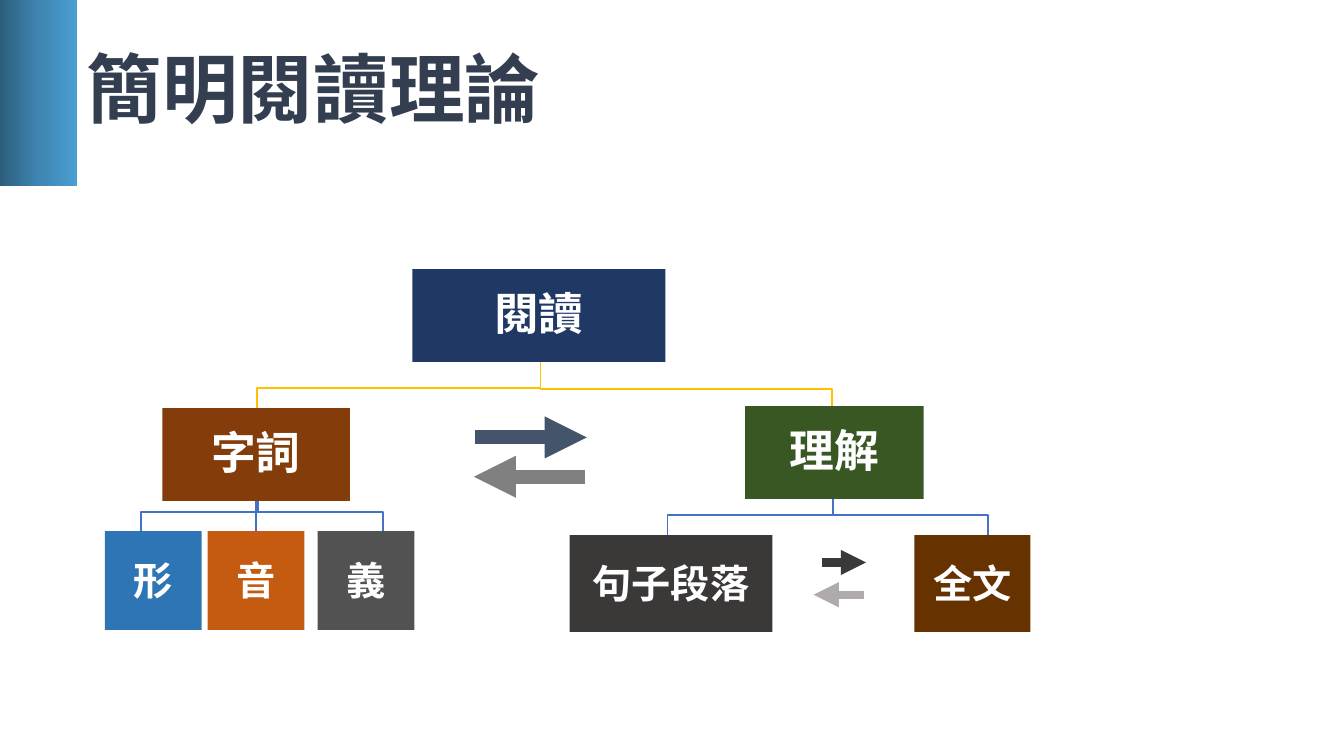
"""Build a slide with a tree diagram of a concise theory of reading."""
from copy import deepcopy

from lxml import etree
from pptx import Presentation
from pptx.dml.color import RGBColor
from pptx.enum.shapes import MSO_CONNECTOR, MSO_SHAPE
from pptx.enum.text import MSO_ANCHOR, MSO_AUTO_SIZE, PP_ALIGN
from pptx.oxml.ns import qn
from pptx.util import Inches, Pt

RECTANGLE = MSO_SHAPE.RECTANGLE
STRAIGHT = MSO_CONNECTOR.STRAIGHT
MIDDLE = MSO_ANCHOR.MIDDLE
NO_FIT = MSO_AUTO_SIZE.NONE
LEFT, CENTER = PP_ALIGN.LEFT, PP_ALIGN.CENTER
FONT = "Noto Sans CJK SC"
BOTTOM_SITE, TOP_SITE = 2, 0


def color(value):
    return RGBColor.from_string(value)


def write(shape, text, size, ink="FFFFFF", align=CENTER, spacing=0.9, inset=0.02):
    frame = shape.text_frame
    frame.word_wrap = True
    frame.auto_size = NO_FIT
    frame.vertical_anchor = MIDDLE
    frame.margin_left = frame.margin_right = Inches(inset)
    frame.margin_top = frame.margin_bottom = Inches(0.02)
    para = frame.paragraphs[0]
    para.alignment = align
    para.line_spacing = spacing
    span = para.add_run()
    span.text = text
    span.font.size = Pt(size)
    span.font.bold = True
    span.font.color.rgb = color(ink)
    span.font.name = FONT
    etree.SubElement(span.font._element, qn("a:ea"), typeface=FONT)


deck = Presentation()
deck.slide_width = Inches(13.33)
deck.slide_height = Inches(7.5)
page = deck.slides.add_slide(deck.slide_layouts[5])
shapes = page.shapes

title = shapes.title
title.left, title.top = Inches(0.76), Inches(0)
title.width, title.height = Inches(11.5), Inches(1.85)
write(title, "簡明閱讀理論", 54, ink="333F50", align=LEFT, inset=0.1)

stripe = shapes.add_shape(RECTANGLE, 0, 0, Inches(0.76), Inches(1.85))
stripe.shadow.inherit = False
stripe.line.fill.background()
stripe.fill.gradient()
stripe.fill.gradient_angle = 0
stop_list = stripe._element.spPr.find(qn("a:gradFill")).find(qn("a:gsLst"))
stop_list.insert(1, deepcopy(stop_list[0]))
stripe_stops = [(0, "2C5E7C"), (0.5, "3F85B1"), (1, "4A9ED2")]
for stop, (position, shade) in zip(stripe.fill.gradient_stops, stripe_stops):
    stop.position = position
    stop.color.rgb = color(shade)

# trunk x, top, bend, branch x, bottom, colour
branches = [
    (8.26, 4.93, 5.11, 9.8, 5.32, "4472C4"),
    (8.26, 4.93, 5.11, 6.62, 5.32, "4472C4"),
    (5.36, 3.59, 3.86, 8.25, 4.06, "FFC000"),
    (2.56, 4.95, 5.08, 3.8, 5.29, "4472C4"),
    (2.56, 4.95, 5.08, 1.4, 5.29, "4472C4"),
    (5.36, 3.59, 3.85, 2.55, 4.06, "FFC000"),
]
for trunk, top, bend, end, bottom, shade in branches:
    outline = shapes.build_freeform(Inches(trunk), Inches(top))
    corners = [(trunk, bend), (end, bend), (end, bottom)]
    outline.add_line_segments([(Inches(x), Inches(y)) for x, y in corners], close=False)
    branch = outline.convert_to_shape()
    branch.shadow.inherit = False
    branch.fill.background()
    branch.line.color.rgb = color(shade)
    branch.line.width = Pt(1)

boxes = {}
nodes = [
    ("閱讀", 4.09, 2.67, 2.51, 0.92, "203864", 32, 0.9),
    ("字詞", 1.61, 4.05, 1.86, 0.92, "843C0B", 32, 0.9),
    ("形", 1.04, 5.27, 0.96, 0.98, "2E75B6", 28, Pt(32)),
    ("音", 2.06, 5.27, 0.96, 0.98, "C55A11", 28, Pt(32)),
    ("義", 3.15, 5.27, 0.96, 0.98, "525252", 28, Pt(32)),
    ("理解", 7.39, 4.03, 1.77, 0.92, "385723", 32, 0.9),
    ("句子段落", 5.65, 5.31, 2.01, 0.96, "3B3838", 28, Pt(32)),
    ("全文", 9.07, 5.31, 1.15, 0.96, "663300", 28, Pt(32)),
]
for text, left, top, width, height, shade, size, spacing in nodes:
    box = shapes.add_shape(RECTANGLE, Inches(left), Inches(top), Inches(width), Inches(height))
    box.shadow.inherit = False
    box.fill.solid()
    box.fill.fore_color.rgb = color(shade)
    box.line.fill.background()
    write(box, text, size, spacing=spacing)
    boxes[text] = box

links = [
    (2.54, 4.97, 2.54, 5.27, "4472C4", 1),
    (4.71, 4.34, 5.82, 4.34, "44546A", 10),
    (5.8, 4.73, 4.7, 4.73, "808080", 10),
    (8.15, 5.58, 8.59, 5.58, "3B3838", 6),
    (8.57, 5.9, 8.07, 5.9, "AFABAB", 6),
]
for x1, y1, x2, y2, shade, weight in links:
    link = shapes.add_connector(STRAIGHT, Inches(x1), Inches(y1), Inches(x2), Inches(y2))
    link.line.color.rgb = color(shade)
    link.line.width = Pt(weight)
    if weight > 1:
        etree.SubElement(link.line._get_or_add_ln(), qn("a:tailEnd"), type="triangle")
    else:
        link.begin_connect(boxes["字詞"], BOTTOM_SITE)
        link.end_connect(boxes["音"], TOP_SITE)
    etree.SubElement(link._element.spPr, qn("a:effectLst"))

deck.save("out.pptx")
